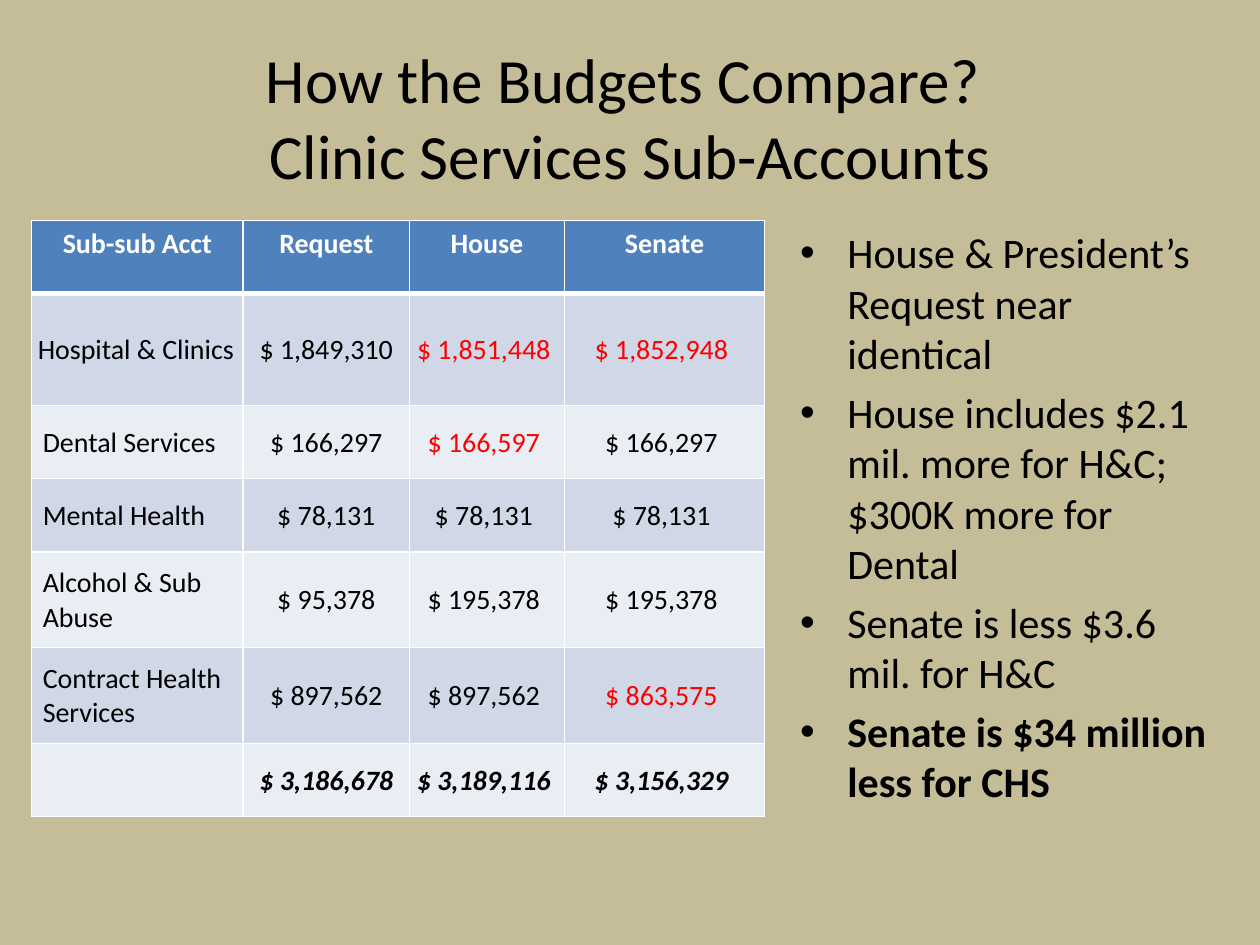
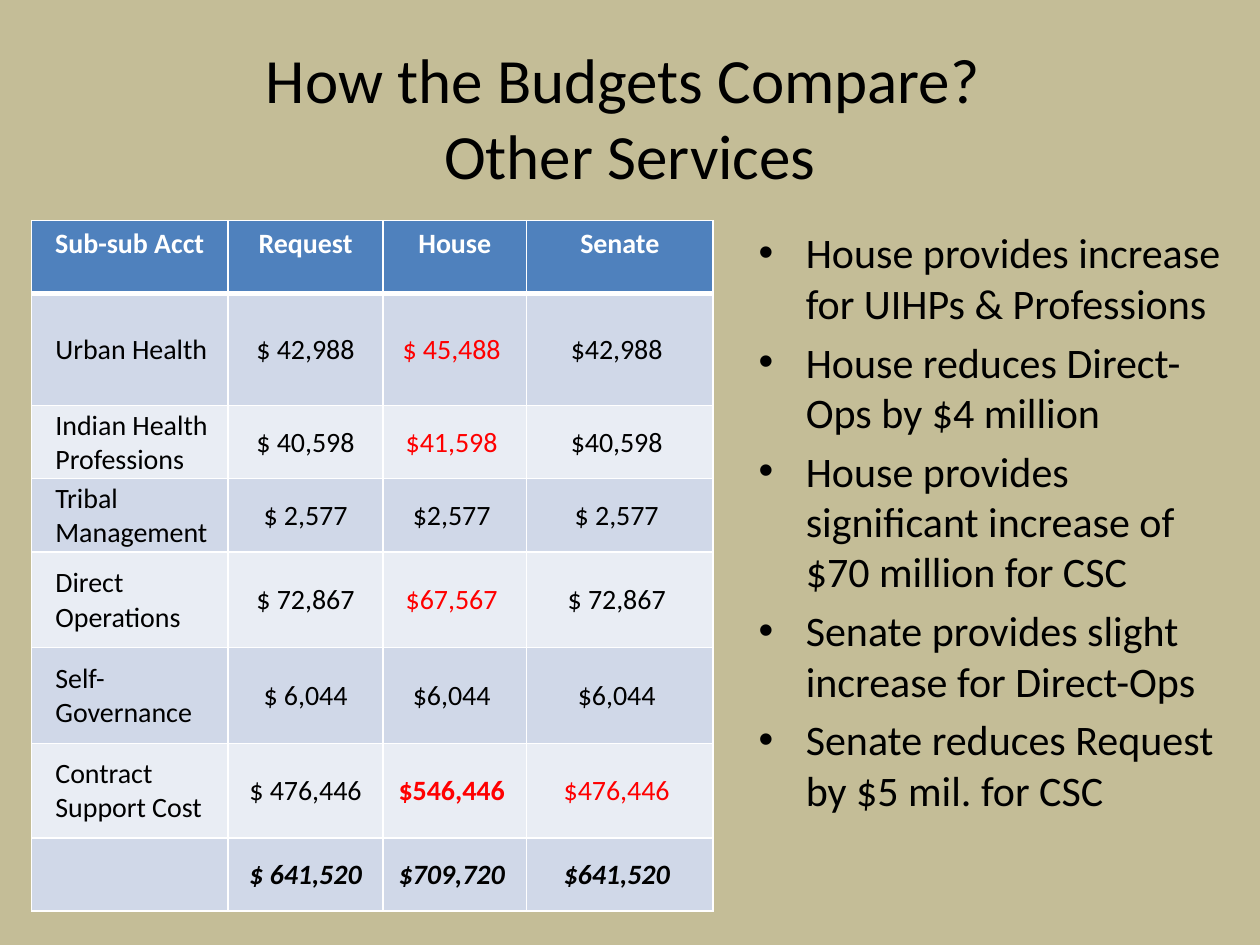
from dataclasses import dataclass, field

from lxml.etree import SubElement
from pptx import Presentation
from pptx.dml.color import RGBColor as Rgb
from pptx.enum.text import MSO_ANCHOR as Anchor, MSO_AUTO_SIZE as AutoSize, PP_ALIGN as Align
from pptx.oxml.ns import qn
from pptx.util import Inches, Pt


@dataclass(frozen=True)
class Theme:
    """Colours, type sizes and cell insets shared by the slides."""
    font: str = "Calibri"
    page: str = "C4BD97"
    text: str = "000000"
    changed: str = "FF0000"
    header: str = "4F81BD"
    bands: tuple = ("D0D8E8", "E9EDF4")
    rule: str = "FFFFFF"
    title_size: int = 36
    list_size: int = 24
    cell_size: int = 16
    header_insets: tuple = (0.05, 0.05, 0.05, 0.05)
    request_insets: tuple = (0.01, 0.01, 0.01, 0)
    amount_insets: tuple = (0.01, 0.01, 0.06, 0)


@dataclass
class Budget:
    """Content and measures of one budget comparison slide."""
    title: str
    table_box: tuple
    columns: tuple
    heights: tuple
    rows: list
    list_box: tuple
    points: list
    changed: set
    label_insets: tuple
    first_label_insets: tuple
    bold_cells: set = field(default_factory=set)
    bold_points: set = field(default_factory=set)


THEME = Theme()
HEADINGS = ("Sub-sub Acct", "Request", "House", "Senate")
TITLE_BOX = (0.5, 0.3, 9, 1.25)

CLINIC = Budget(
    title="How the Budgets Compare? \vClinic Services Sub-Accounts",
    table_box=(0.25, 1.75, 5.83, 4.75),
    columns=(1.68, 1.32, 1.23, 1.59),
    heights=(0.58, 0.89, 0.58, 0.58, 0.76, 0.76, 0.58),
    rows=[
        ("Hospital & Clinics", "$ 1,849,310", "$ 1,851,448", "$ 1,852,948"),
        ("Dental Services", "$ 166,297", "$ 166,597", "$ 166,297"),
        ("Mental Health", "$ 78,131", "$ 78,131", "$ 78,131"),
        ("Alcohol & Sub Abuse", "$ 95,378", "$ 195,378", "$ 195,378"),
        ("Contract Health Services", "$ 897,562", "$ 897,562", "$ 863,575"),
        ("", "$ 3,186,678", "$ 3,189,116", "$ 3,156,329"),
    ],
    list_box=(6.25, 1.75, 3.58, 4.95),
    points=[
        "House & President’s Request near identical",
        "House includes $2.1 mil. more for H&C; $300K more for Dental",
        "Senate is less $3.6 mil. for H&C",
        "Senate is $34 million less for CHS",
    ],
    changed={(1, 2), (1, 3), (2, 2), (5, 3)},
    label_insets=(0.09, 0.01, 0.01, 0),
    first_label_insets=THEME.header_insets,
    bold_points={3},
)

OTHER = Budget(
    title="How the Budgets Compare? \vOther Services",
    table_box=(0.25, 1.75, 5.42, 5.5),
    columns=(1.56, 1.23, 1.14, 1.48),
    heights=(0.58, 0.89, 0.58, 0.58, 0.76, 0.76, 0.75, 0.58),
    rows=[
        ("Urban Health", "$ 42,988", "$ 45,488", "$42,988"),
        ("Indian Health Professions", "$ 40,598", "$41,598", "$40,598"),
        ("Tribal Management", "$ 2,577", "$2,577", "$ 2,577"),
        ("Direct Operations", "$ 72,867", "$67,567", "$ 72,867"),
        ("Self-Governance", "$ 6,044", "$6,044", "$6,044"),
        ("Contract Support Cost", "$ 476,446", "$546,446", "$476,446"),
        ("", "$ 641,520", "$709,720", "$641,520"),
    ],
    list_box=(5.92, 1.75, 3.92, 4.95),
    points=[
        "House provides increase for UIHPs & Professions",
        "House reduces Direct-Ops by $4 million",
        "House provides significant increase of $70 million for CSC",
        "Senate provides slight increase for Direct-Ops",
        "Senate reduces Request by $5 mil. for CSC",
    ],
    changed={(1, 2), (2, 2), (4, 2), (6, 2), (6, 3)},
    label_insets=(0.19, 0.01, 0.01, 0),
    first_label_insets=(0.19, 0.01, 0.01, 0),
    bold_cells={(6, 2)},
)


def set_all(target, values):
    """Set each named attribute of the target."""
    for name, value in values.items():
        setattr(target, name, value)


def write(para, text, size, color=THEME.text, align=Align.LEFT, **styles):
    """Write one formatted run in a paragraph."""
    para.text = text
    para.alignment = align
    for span in para.runs:
        set_all(span.font, {"name": THEME.font, "size": Pt(size), **styles})
        span.font.color.rgb = Rgb.from_string(color)


def place(shape, box):
    """Move a placeholder into its box."""
    names = ("left", "top", "width", "height")
    set_all(shape, dict(zip(names, map(Inches, box))))


def add_title(page, text, box):
    """Fill the title placeholder."""
    title = page.shapes.title
    place(title, box)
    title.text_frame.vertical_anchor = Anchor.MIDDLE
    write(title.text_frame.paragraphs[0], text, THEME.title_size, align=Align.CENTER)


def add_points(page, points, bold_points, box):
    """Fill the body placeholder with its bulleted list."""
    body = page.placeholders[1]
    place(body, box)
    frame = body.text_frame
    frame.auto_size = AutoSize.NONE
    for index, point in enumerate(points):
        para = frame.add_paragraph() if index else frame.paragraphs[0]
        write(para, point, THEME.list_size, bold=index in bold_points)


def rule_cell(cell, widths):
    """Draw the cell's four borders, given as edge and width pairs."""
    properties = cell._tc.get_or_add_tcPr()
    for edge, width in widths.items():
        line = SubElement(properties, qn(f"a:ln{edge}"), w=str(Pt(width)))
        fill = SubElement(line, qn("a:solidFill"))
        SubElement(fill, qn("a:srgbClr"), val=THEME.rule)


def cell_insets(budget, row, column):
    """Return the left, top, right and bottom insets of a cell."""
    if row == 0:
        return THEME.header_insets
    if column == 0:
        return budget.first_label_insets if row == 1 else budget.label_insets
    return THEME.request_insets if column == 1 else THEME.amount_insets


def format_cell(cell, budget, row, column, text):
    """Write and colour one cell by its place in the table."""
    header, total = row == 0, row == len(budget.rows)
    rule_cell(cell, {"L": 1, "R": 1, "T": 3 if row == 1 else 1, "B": 3 if header else 1})
    cell.fill.solid()
    cell.fill.fore_color.rgb = Rgb.from_string(
        THEME.header if header else THEME.bands[(row - 1) % 2])
    sides = ("margin_left", "margin_top", "margin_right", "margin_bottom")
    set_all(cell, dict(zip(sides, map(Inches, cell_insets(budget, row, column)))))
    cell.vertical_anchor = Anchor.TOP if header else Anchor.MIDDLE
    color = THEME.changed if (row, column) in budget.changed else THEME.text
    write(cell.text_frame.paragraphs[0], text, THEME.cell_size,
          color=THEME.rule if header else color,
          align=Align.CENTER if header or column else Align.LEFT,
          bold=header or total or (row, column) in budget.bold_cells,
          italic=total)


def add_budget_table(page, budget, box):
    """Add the table of sub-accounts."""
    rows = [HEADINGS, *budget.rows]
    table = page.shapes.add_table(len(rows), len(HEADINGS), *map(Inches, box)).table
    for column, width in zip(table.columns, budget.columns):
        column.width = Inches(width)
    for row, height in zip(table.rows, budget.heights):
        row.height = Inches(height)
    for row, texts in enumerate(rows):
        for column, text in enumerate(texts):
            format_cell(table.cell(row, column), budget, row, column, text)


def add_budget_slide(deck, budget):
    """Add a slide with a title, a budget table and a list."""
    page = deck.slides.add_slide(deck.slide_layouts[1])
    add_title(page, budget.title, TITLE_BOX)
    add_budget_table(page, budget, budget.table_box)
    add_points(page, budget.points, budget.bold_points, budget.list_box)


def main():
    """Build and save the deck."""
    deck = Presentation()
    set_all(deck, {"slide_width": Inches(10), "slide_height": Inches(7.5)})
    background = deck.slide_master.background.fill
    background.solid()
    background.fore_color.rgb = Rgb.from_string(THEME.page)
    for budget in (CLINIC, OTHER):
        add_budget_slide(deck, budget)
    deck.save("out.pptx")


if __name__ == "__main__":
    main()
